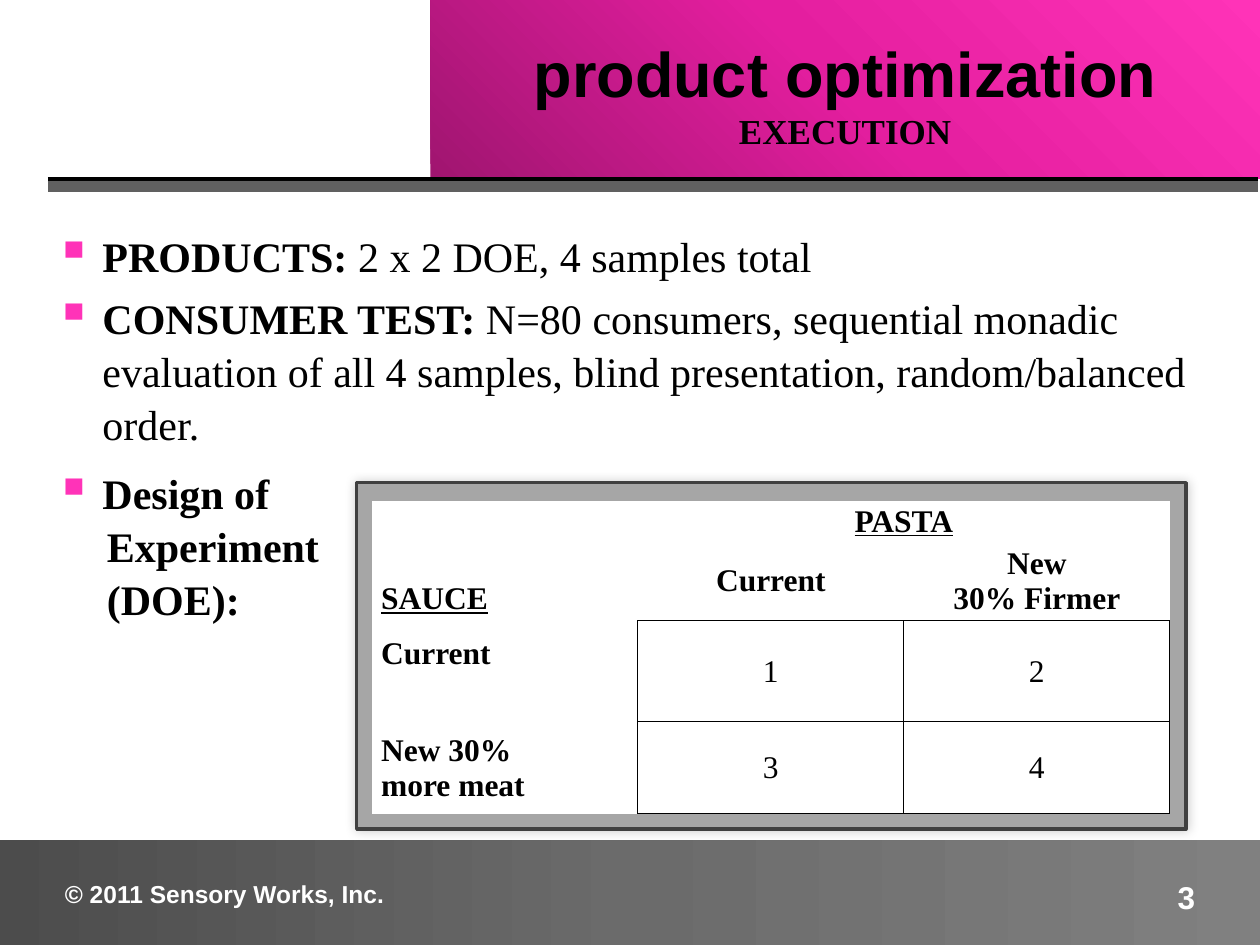
from copy import deepcopy

from lxml import etree
from pptx import Presentation
from pptx.dml.color import RGBColor
from pptx.enum.shapes import MSO_CONNECTOR, MSO_SHAPE
from pptx.enum.text import MSO_ANCHOR, PP_ALIGN
from pptx.oxml.ns import qn
from pptx.util import Pt

LINE, RECTANGLE = MSO_CONNECTOR.STRAIGHT, MSO_SHAPE.RECTANGLE
TOP, MIDDLE, BOTTOM = MSO_ANCHOR.TOP, MSO_ANCHOR.MIDDLE, MSO_ANCHOR.BOTTOM
LEFT, CENTER, RIGHT = PP_ALIGN.LEFT, PP_ALIGN.CENTER, PP_ALIGN.RIGHT
SANS, SERIF = "Arial", "Times New Roman"
BLACK, WHITE, PINK = "000000", "FFFFFF", "FF33B8"
BORDER_TAGS = {"l": "a:lnL", "r": "a:lnR", "t": "a:lnT", "b": "a:lnB"}

# Bold lead, plain rest, space before, left indent, bulleted
BODY = [
    ("PRODUCTS: ", "2 x 2 DOE, 4 samples total", 0, 27, True),
    ("CONSUMER TEST: ", "N=80 consumers, sequential monadic evaluation of all 4 "
     "samples, blind presentation, random/balanced order.", 5, 27, True),
    ("Design of", "", 9.4, 27, True),
    ("Experiment", "", 0, 29.5, False),
    ("(DOE):", "", 0, 29.5, False),
]
DESIGN = [
    ["", "PASTA", ""],
    ["SAUCE", "Current", "New\n30% Firmer"],
    ["Current", "1", "2"],
    ["New 30%\nmore meat", "3", "4"],
]
ROW_HEIGHTS = [19.4, 46, 57.6, 52.6]
COLUMN_WIDTH = 152


def rgb(value):
    return RGBColor.from_string(value)


def add(parent, tag, **attributes):
    return etree.SubElement(parent, qn(tag), attributes)


def style(run, size, face, color=BLACK, bold=True, underline=False):
    font = run.font
    font.size, font.name, font.bold = Pt(size), face, bold
    font.underline = underline
    font.color.rgb = rgb(color)


def add_panel(slide, left, top, width, height):
    panel = slide.shapes.add_shape(
        RECTANGLE, Pt(left), Pt(top), Pt(width), Pt(height))
    panel.shadow.inherit = False
    panel.line.fill.background()
    return panel


def fill_gradient(panel, colors, angle):
    """Spread three colours evenly at a counter-clockwise angle."""
    panel.fill.gradient()
    panel.fill.gradient_angle = angle
    stops = panel.fill._fill._gradFill.gsLst
    stops.insert(1, deepcopy(stops[0]))
    for stop, color, position in zip(panel.fill.gradient_stops, colors, (0, 0.5, 1)):
        stop.color.rgb = rgb(color)
        stop.position = position


def add_rule(slide, y, color):
    rule = slide.shapes.add_connector(LINE, Pt(27.4), Pt(y), Pt(718.6), Pt(y))
    rule.line.color.rgb = rgb(color)
    rule.line.width = Pt(6)
    add(rule._element.spPr, "a:effectLst")


def add_frame(slide):
    frame = add_panel(slide, 203.8, 275.8, 473.8, 198)
    frame.fill.solid()
    frame.fill.fore_color.rgb = rgb("A6A6A6")
    frame.line.color.rgb = rgb("404040")
    frame.line.width = Pt(2)
    effects = frame._element.spPr.find(qn("a:effectLst"))
    shadow = add(effects, "a:outerShdw", blurRad=str(Pt(6)), dist="0", dir="13500000")
    color = add(shadow, "a:srgbClr", val=BLACK)
    add(color, "a:alpha", val="20000")


def add_text(slide, left, top, width, height, lines=(), align=LEFT, anchor=TOP):
    """Add a box of lines, each given as text, size, face and colour."""
    box = slide.shapes.add_textbox(Pt(left), Pt(top), Pt(width), Pt(height))
    frame = box.text_frame
    frame.word_wrap = True
    frame.vertical_anchor = anchor
    frame.text = "\n".join(line[0] for line in lines)
    for paragraph, (_, size, face, color) in zip(frame.paragraphs, lines):
        paragraph.alignment = align
        style(paragraph.runs[0], size, face, color)
    return frame


def add_bullet(properties):
    color = add(properties, "a:buClr")
    add(color, "a:srgbClr", val=PINK)
    add(properties, "a:buSzPct", val="120000")
    add(properties, "a:buChar", char="▪")


def add_body(slide):
    frame = add_text(slide, 24.5, 126.9, 671.8, 354)
    for index, (lead, rest, space, indent, bulleted) in enumerate(BODY):
        paragraph = frame.add_paragraph() if index else frame.paragraphs[0]
        properties = paragraph._p.get_or_add_pPr()
        properties.set("marL", str(Pt(indent)))
        if bulleted:
            properties.set("indent", str(-Pt(indent)))
            add_bullet(properties)
        paragraph.line_spacing = 1.05
        if space:
            paragraph.space_before = Pt(space)
        for text, bold in ((lead, True), (rest, False)):
            if text:
                run = paragraph.add_run()
                run.text = text
                style(run, 24, SERIF, bold=bold)


def set_borders(cell, sides):
    properties = cell._tc.get_or_add_tcPr()
    for side, tag in BORDER_TAGS.items():
        border = add(properties, tag, w=str(Pt(0.5)))
        if side in sides:
            color = add(add(border, "a:solidFill"), "a:srgbClr", val=BLACK)
        else:
            add(border, "a:noFill")


def fill_cell(cell, text, row, column):
    is_sample = row >= 2 and column >= 1
    if is_sample:
        sides = "lrtb"
    elif row == 1 and column:
        sides = "b"
    else:
        sides = "r" if row >= 2 else ""
    set_borders(cell, sides)
    cell.fill.solid()
    cell.fill.fore_color.rgb = rgb(WHITE)
    cell.margin_left = Pt(0.7 if column else 5.3)
    cell.margin_right = cell.margin_top = Pt(0.7)
    cell.margin_bottom = 0
    cell.vertical_anchor = MIDDLE
    if text == "SAUCE":
        cell.vertical_anchor = BOTTOM
        cell.margin_bottom = Pt(2.5)
    elif (row, column) == (2, 0):
        cell.vertical_anchor = TOP
        cell.margin_top = Pt(9)
    cell.text_frame.text = text
    for paragraph in cell.text_frame.paragraphs:
        paragraph.alignment = CENTER if column else LEFT
        for run in paragraph.runs:
            style(run, 18, SERIF, bold=not is_sample,
                  underline=text in ("PASTA", "SAUCE"))


def add_design_table(slide):
    table = slide.shapes.add_table(
        len(DESIGN), 3, Pt(212.5), Pt(286.4),
        Pt(3 * COLUMN_WIDTH), Pt(sum(ROW_HEIGHTS))).table
    table.first_row = table.horz_banding = False
    for column in table.columns:
        column.width = Pt(COLUMN_WIDTH)
    for row, height in zip(table.rows, ROW_HEIGHTS):
        row.height = Pt(height)
    for row, texts in enumerate(DESIGN):
        for column, text in enumerate(texts):
            fill_cell(table.cell(row, column), text, row, column)
    table.cell(0, 1).merge(table.cell(0, 2))


def main():
    deck = Presentation()
    deck.slide_width, deck.slide_height = Pt(720), Pt(540)
    slide = deck.slides.add_slide(deck.slide_layouts[6])

    header = add_panel(slide, 246, 0, 474, 102)
    fill_gradient(header, ("A01570", "E41E9F", PINK), 45)
    footer = add_panel(slide, 0, 480, 720, 60)
    fill_gradient(footer, ("4C4C4C", "6B6B6B", "808080"), 0)
    add_rule(slide, 104.4, BLACK)
    add_rule(slide, 106.6, "606060")

    add_frame(slide)
    add_body(slide)
    add_text(slide, 246, 16, 474, 86, [
        ("product optimization", 36, SANS, BLACK),
        ("EXECUTION", 20, SERIF, BLACK)], CENTER)
    add_design_table(slide)
    add_text(slide, 30, 495, 204, 31, [
        ("© 2011 Sensory Works, Inc.", 14, SANS, WHITE)], anchor=MIDDLE)
    add_text(slide, 540, 497, 150, 31, [("3", 18, SANS, WHITE)], RIGHT, MIDDLE)
    deck.save("out.pptx")


if __name__ == "__main__":
    main()
